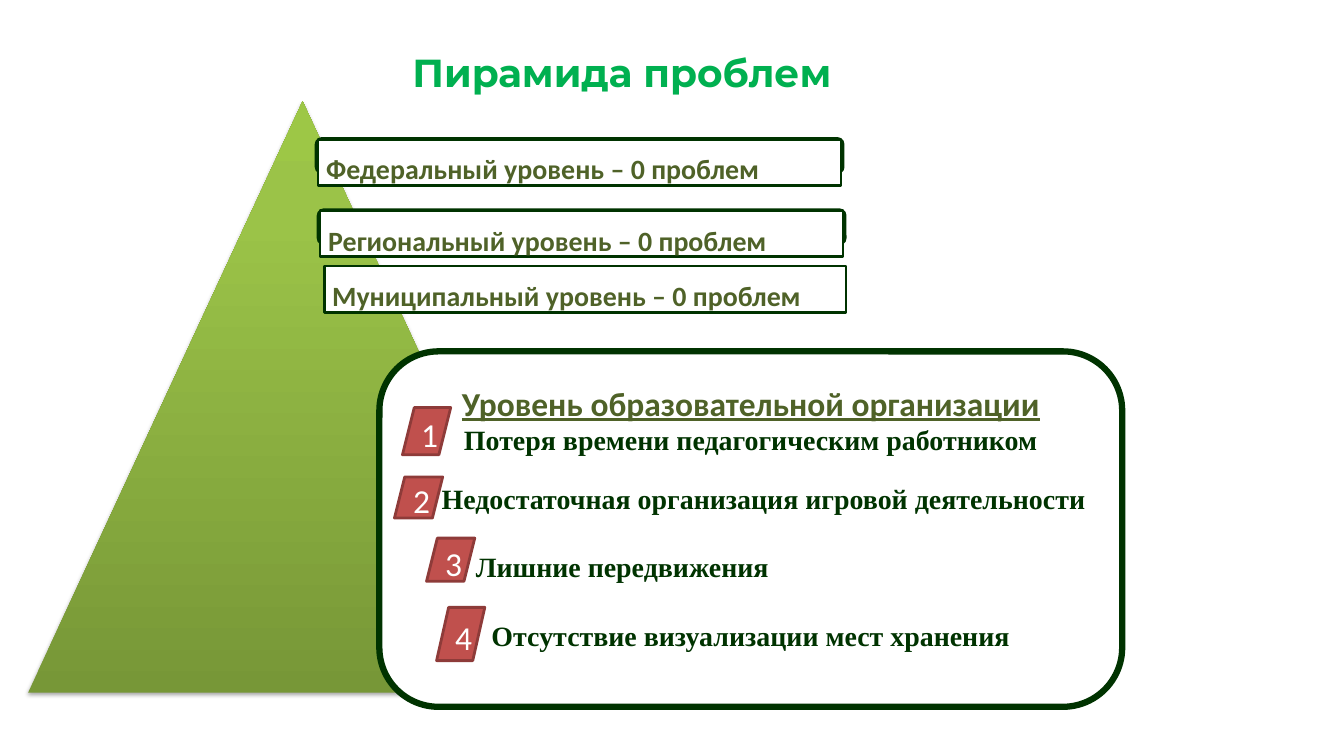
from copy import deepcopy
from lxml.etree import SubElement
from pptx import Presentation
from pptx.dml.color import RGBColor
from pptx.enum.shapes import MSO_SHAPE
from pptx.enum.text import MSO_ANCHOR, PP_ALIGN
from pptx.oxml.ns import qn
from pptx.util import Inches, Pt

GREEN = RGBColor(0x00, 0xB0, 0x50)
DARK = RGBColor(0x00, 0x33, 0x00)
OLIVE = RGBColor(0x4F, 0x62, 0x28)
RED = RGBColor(0xC0, 0x50, 0x4D)
MAROON = RGBColor(0x8E, 0x3B, 0x39)
WHITE = RGBColor(0xFF, 0xFF, 0xFF)
SHADES = [(0, RGBColor(0x77, 0x97, 0x37)), (0.8, RGBColor(0x9B, 0xC3, 0x48)),
          (1, RGBColor(0x9D, 0xC7, 0x46))]
LEVELS = [  # text, left, top and width in percent of the slide, framed
    ("Федеральный уровень – 0 проблем", 23.67, 18.58, 38.91, True),
    ("Региональный уровень – 0 проблем", 23.82, 28.07, 38.91, True),
    ("Муниципальный уровень – 0 проблем", 24.12, 35.43, 38.83, False)]
ISSUES = [  # text, space before in points, indent in inches (None: centred)
    ("Потеря времени педагогическим работником", 0, None),
    ("Недостаточная организация игровой деятельности", 18, 0.35),
    ("Лишние передвижения", 25, 0.69),
    ("Отсутствие визуализации мест хранения", 25, None)]
BADGES = [  # left, top and height in percent of the panel
    (3.11, 15.82, 13.28), (2.03, 35.31, 11.58),
    (6.35, 52.54, 12.15), (7.7, 72.03, 14.97)]


def part(box, x, y, w, h):
    """Box at percent shares of another box."""
    left, top, wide, high = box
    return (int(left + wide * x / 100), int(top + high * y / 100),
            int(wide * w / 100), int(high * h / 100))


def block(slide, kind, box, fill, line, width):
    shape = slide.shapes.add_shape(kind, *box)
    shape.shadow.inherit = False
    shape.fill.solid()
    shape.fill.fore_color.rgb = fill
    shape.line.color.rgb = line
    shape.line.width = Pt(width)
    return shape


def frame(shape, left, top, right, bottom, anchor=MSO_ANCHOR.MIDDLE):
    body = shape.text_frame
    body.margin_left, body.margin_top = Inches(left), Inches(top)
    body.margin_right, body.margin_bottom = Inches(right), Inches(bottom)
    body.vertical_anchor = anchor
    return body


def write(para, text, size, color, name="Calibri", bold=True,
          align=PP_ALIGN.CENTER):
    para.text = text
    para.alignment = align
    font = para.runs[0].font
    font.size, font.name, font.bold = Pt(size), name, bold
    font.color.rgb = color
    return font


def title(slide, box):
    shape = slide.shapes.title
    shape.left, shape.top, shape.width, shape.height = box
    body = frame(shape, 0, 0.05, 0, 0.05)
    body.word_wrap = False
    write(body.paragraphs[0], "Пирамида проблем", 28, GREEN, "Montserrat")


def pyramid(slide, box):
    shape = slide.shapes.add_shape(MSO_SHAPE.FLOWCHART_EXTRACT, *box)
    shape.line.fill.background()
    # Three-stop gradient, dark at the foot
    fill = shape.fill
    fill.gradient()
    fill.gradient_angle = 90
    stops = shape.element.spPr.find(qn("a:gradFill")).find(qn("a:gsLst"))
    stops.append(deepcopy(stops[-1]))
    for stop, (pos, color) in zip(fill.gradient_stops, SHADES):
        stop.position = pos
        stop.color.rgb = color
    # Soft shadow below
    shape.shadow.inherit = False
    glow = SubElement(shape.element.spPr.find(qn("a:effectLst")),
                      qn("a:outerShdw"), blurRad=str(Pt(3.1)),
                      dist=str(Pt(1.8)), dir="5400000", rotWithShape="0")
    tone = SubElement(glow, qn("a:srgbClr"), val="000000")
    SubElement(tone, qn("a:alpha"), val="35000")


def level(slide, box, text, framed):
    if framed:
        back = part(box, -0.38, -2.2, 100.77, 74)
        block(slide, MSO_SHAPE.ROUNDED_RECTANGLE, back, WHITE, DARK, 2)
    shape = block(slide, MSO_SHAPE.RECTANGLE, box, WHITE, DARK, 2)
    body = frame(shape, 0.08, 0.12, 0.08, 0)
    write(body.paragraphs[0], text, 20, OLIVE, align=PP_ALIGN.LEFT)


def panel(slide, box):
    shape = block(slide, MSO_SHAPE.ROUNDED_RECTANGLE, box, WHITE, DARK, 4.5)
    body = frame(shape, 0.1, 0.14, 0.1, 0.05, MSO_ANCHOR.TOP)
    head = write(body.paragraphs[0], "Уровень образовательной организации",
                 24, OLIVE)
    head.underline = True
    # Problem lines
    for text, gap, indent in ISSUES:
        para = body.add_paragraph()
        align = PP_ALIGN.CENTER if indent is None else PP_ALIGN.LEFT
        write(para, text, 20, DARK, "Times New Roman", align=align)
        para.space_before = Pt(gap)
        if indent:
            para._p.get_or_add_pPr().set("marL", str(Inches(indent)))
    # Numbered badges
    for num, (x, y, h) in enumerate(BADGES, 1):
        badge = block(slide, MSO_SHAPE.PARALLELOGRAM,
                      part(box, x, y, 6.49, h), RED, MAROON, 2)
        body = frame(badge, 0.06, 0.06, 0, 0)
        body.word_wrap = False
        write(body.paragraphs[0], str(num), 24, WHITE, bold=False)


def main():
    deck = Presentation()
    deck.slide_width, deck.slide_height = Inches(13.39), Inches(7.48)
    slide = deck.slides.add_slide(deck.slide_layouts[5])
    page = (0, 0, deck.slide_width, deck.slide_height)
    title(slide, part(page, 29.43, 5.75, 33.68, 7.62))
    pyramid(slide, part(page, 2.09, 13.5, 40.85, 78.74))
    for text, x, y, w, framed in LEVELS:
        level(slide, part(page, x, y, w, 6.15), text, framed)
    panel(slide, part(page, 28.23, 46.79, 55.27, 47.33))
    deck.save("out.pptx")


if __name__ == "__main__":
    main()
